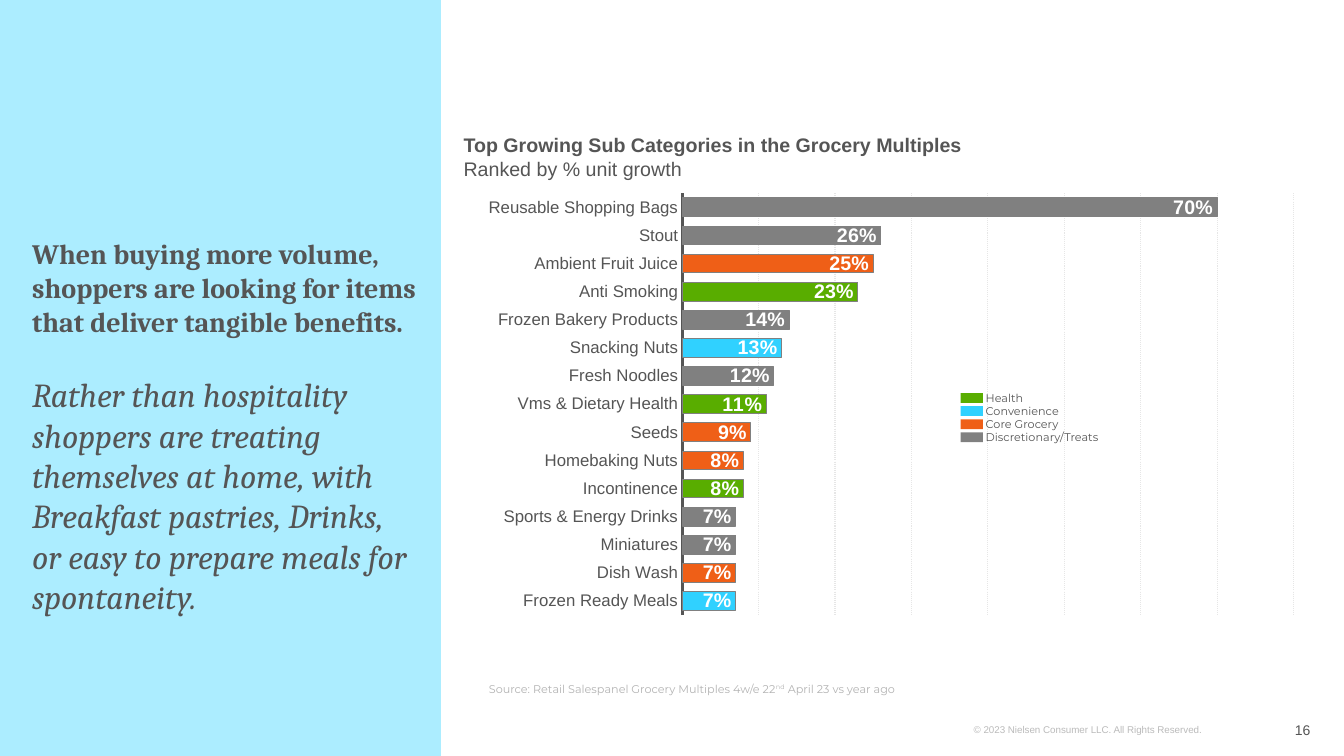
from dataclasses import dataclass
from typing import NamedTuple

from lxml import etree
from pptx import Presentation
from pptx import util as u
from pptx.chart import data as cd
from pptx.dml import color as c
from pptx.enum import chart as ch, dml, shapes, text
from pptx.oxml import ns


@dataclass(frozen=True)
class Theme:
    panel: str = "ACEDFF"
    ink: str = "555555"
    source: str = "B3B3B3"
    footer: str = "BBBBBB"
    grid: str = "E6E6E6"
    white: str = "FFFFFF"
    sans: str = "Arial"
    serif: str = "Cambria"
    note: str = "Montserrat"
    lead: float = 20
    story: float = 24
    heading: float = 14
    category: float = 12
    page: float = 10
    small: float = 8
    legal: float = 7


class Group(NamedTuple):
    name: str
    color: str


class Bar(NamedTuple):
    label: str
    value: float
    group: Group


class Box(NamedTuple):
    x: float
    y: float
    w: float
    h: float

    def points(self) -> list:
        return [u.Pt(v) for v in self]


class Style(NamedTuple):
    size: float
    face: str
    color: str
    bold: bool = False
    italic: bool = False


T = Theme()
HEALTH = Group("Health", "59AD00")
CONVENIENCE = Group("Convenience", "30D1FF")
CORE = Group("Core Grocery", "EF5F17")
TREATS = Group("Discretionary/Treats", "808080")
GROUPS = [HEALTH, CONVENIENCE, CORE, TREATS]

BARS = [
    Bar("Reusable Shopping Bags", 0.70, TREATS),
    Bar("Stout", 0.26, TREATS),
    Bar("Ambient Fruit Juice", 0.25, CORE),
    Bar("Anti Smoking", 0.23, HEALTH),
    Bar("Frozen Bakery Products", 0.14, TREATS),
    Bar("Snacking Nuts", 0.13, CONVENIENCE),
    Bar("Fresh Noodles", 0.12, TREATS),
    Bar("Vms & Dietary Health", 0.11, HEALTH),
    Bar("Seeds", 0.09, CORE),
    Bar("Homebaking Nuts", 0.08, CORE),
    Bar("Incontinence", 0.08, HEALTH),
    Bar("Sports & Energy Drinks", 0.07, TREATS),
    Bar("Miniatures", 0.07, TREATS),
    Bar("Dish Wash", 0.07, CORE),
    Bar("Frozen Ready Meals", 0.07, CONVENIENCE),
]


def rgb(color: str) -> c.RGBColor:
    return c.RGBColor.from_string(color)


def set_font(font, style: Style) -> None:
    font.size, font.name = u.Pt(style.size), style.face
    font.bold, font.italic = style.bold, style.italic
    font.color.rgb = rgb(style.color)


def add_rect(s, box: Box, color: str) -> None:
    sp = s.shapes.add_shape(shapes.MSO_SHAPE.RECTANGLE, *box.points())
    sp.shadow.inherit = False
    sp.fill.solid()
    sp.fill.fore_color.rgb = rgb(color)
    sp.line.fill.background()


def add_text(s, box: Box, lines: list[tuple[str, Style]], inset: float = 0,
             anchor=text.MSO_ANCHOR.TOP):
    """Add a text box with one paragraph per line and return its frame."""
    tf = s.shapes.add_textbox(*box.points()).text_frame
    tf.word_wrap, tf.vertical_anchor = True, anchor
    tf.margin_left = tf.margin_right = u.Pt(inset)
    tf.text = "\n".join(line for line, _ in lines)
    for p, (_, style) in zip(tf.paragraphs, lines):
        for r in p.runs:
            set_font(r.font, style)
    return tf


def set_plot_area(chart, x: float, y: float, w: float, h: float) -> None:
    """Fix the inner plot area, in fractions of the chart frame."""
    plot_area = chart.plots[0]._element.getparent()
    for old in plot_area.findall(ns.qn("c:layout")):
        plot_area.remove(old)
    layout = etree.Element(ns.qn("c:layout"))
    manual = etree.SubElement(layout, ns.qn("c:manualLayout"))
    settings = dict(layoutTarget="inner", xMode="edge", yMode="edge", x=x, y=y, w=w, h=h)
    for tag, value in settings.items():
        etree.SubElement(manual, ns.qn(f"c:{tag}")).set("val", str(value))
    plot_area.insert(0, layout)


def add_growth_chart(s, box: Box) -> None:
    data = cd.CategoryChartData(number_format="0%")
    data.categories = [bar.label for bar in BARS]
    data.add_series("Series 1", [bar.value for bar in BARS])
    chart = s.shapes.add_chart(ch.XL_CHART_TYPE.BAR_STACKED, *box.points(), data).chart
    chart.has_legend = chart.has_title = False
    set_font(chart.font, Style(T.page, T.sans, T.ink))
    set_plot_area(chart, 0.25, 0.02, 0.73, 0.96)

    cat = chart.category_axis
    cat.reverse_order = True
    cat.major_tick_mark = ch.XL_TICK_MARK.NONE
    set_font(cat.tick_labels.font, Style(T.category, T.sans, T.ink))
    cat.format.line.color.rgb = rgb(T.ink)
    cat.format.line.width = u.Pt(2)

    val = chart.value_axis
    val.minimum_scale, val.maximum_scale, val.major_unit = 0, 0.8, 0.1
    val.visible = False
    grid = val.major_gridlines.format.line
    grid.color.rgb = rgb(T.grid)
    grid.width = u.Pt(0.75)
    grid.dash_style = dml.MSO_LINE.ROUND_DOT

    plot = chart.plots[0]
    plot.gap_width, plot.overlap, plot.vary_by_categories = 50, 100, False
    for i, bar in enumerate(BARS):
        fmt = plot.series[0].points[i].format
        fmt.fill.solid()
        fmt.fill.fore_color.rgb = rgb(bar.group.color)
        fmt.line.color.rgb = rgb(TREATS.color)
        fmt.line.width = u.Pt(0.75)
    plot.has_data_labels = True
    labels = plot.data_labels
    labels.show_value = True
    labels.number_format, labels.number_format_is_linked = "0%", False
    labels.position = ch.XL_LABEL_POSITION.INSIDE_END
    set_font(labels.font, Style(T.heading, T.sans, T.white, bold=True))


def add_legend(s, x: float, y: float, pitch: float) -> None:
    for i, group in enumerate(GROUPS):
        top = y + i * pitch
        add_rect(s, Box(x, top, 16, 7), group.color)
        add_text(s, Box(x + 10.8, top - 5, 105, 17),
                 [(group.name, Style(T.small, T.note, T.ink))], inset=7.2)


def add_source(s, box: Box) -> None:
    style = Style(T.small, T.note, T.source)
    tf = add_text(s, box, [("Source: Retail Salespanel Grocery Multiples 4w/e 22", style)],
                  anchor=text.MSO_ANCHOR.BOTTOM)
    p = tf.paragraphs[0]
    p._p.get_or_add_pPr().set("marL", str(u.Pt(11.5)))
    for words, baseline in [("nd", "30000"), (" April 23 vs year ago", "0")]:
        r = p.add_run()
        r.text = words
        set_font(r.font, style)
        r._r.get_or_add_rPr().set("baseline", baseline)


def main() -> None:
    prs = Presentation()
    prs.slide_width, prs.slide_height = u.Pt(960), u.Pt(540)
    s = prs.slides.add_slide(prs.slide_layouts[6])

    add_rect(s, Box(0, 0, 315, 540), T.panel)
    add_text(s, Box(695.5, 513.4, 204.5, 16),
             [("© 2023 Nielsen Consumer LLC. All Rights Reserved.",
               Style(T.legal, T.sans, T.footer))])
    add_growth_chart(s, Box(337.7, 131.8, 598.3, 313.9))
    page = add_text(s, Box(864.7, 506.9, 71.3, 28.8),
                    [("16", Style(T.page, T.sans, T.ink))], anchor=text.MSO_ANCHOR.MIDDLE)
    page.paragraphs[0].alignment = text.PP_ALIGN.RIGHT
    story = add_text(s, Box(23, 155.6, 275.8, 288), [
        ("When buying more volume, shoppers are looking for items that deliver "
         "tangible benefits.", Style(T.lead, T.serif, T.ink, bold=True)),
        ("Rather than hospitality shoppers are treating themselves at home, with "
         "Breakfast pastries, Drinks, or easy to prepare meals for spontaneity.",
         Style(T.story, T.serif, T.ink, italic=True)),
    ], anchor=text.MSO_ANCHOR.BOTTOM)
    story.paragraphs[1].space_before = u.Pt(26)
    add_source(s, Box(337.7, 471.6, 598.3, 28.8))
    add_text(s, Box(324, 91.4, 598.3, 41), [
        ("Top Growing Sub Categories in the Grocery Multiples",
         Style(T.heading, T.sans, T.ink, bold=True)),
        ("Ranked by % unit growth", Style(T.heading, T.sans, T.ink)),
    ], inset=7.2)
    add_legend(s, x=686.2, y=280.8, pitch=9.36)
    prs.save("out.pptx")


if __name__ == "__main__":
    main()
